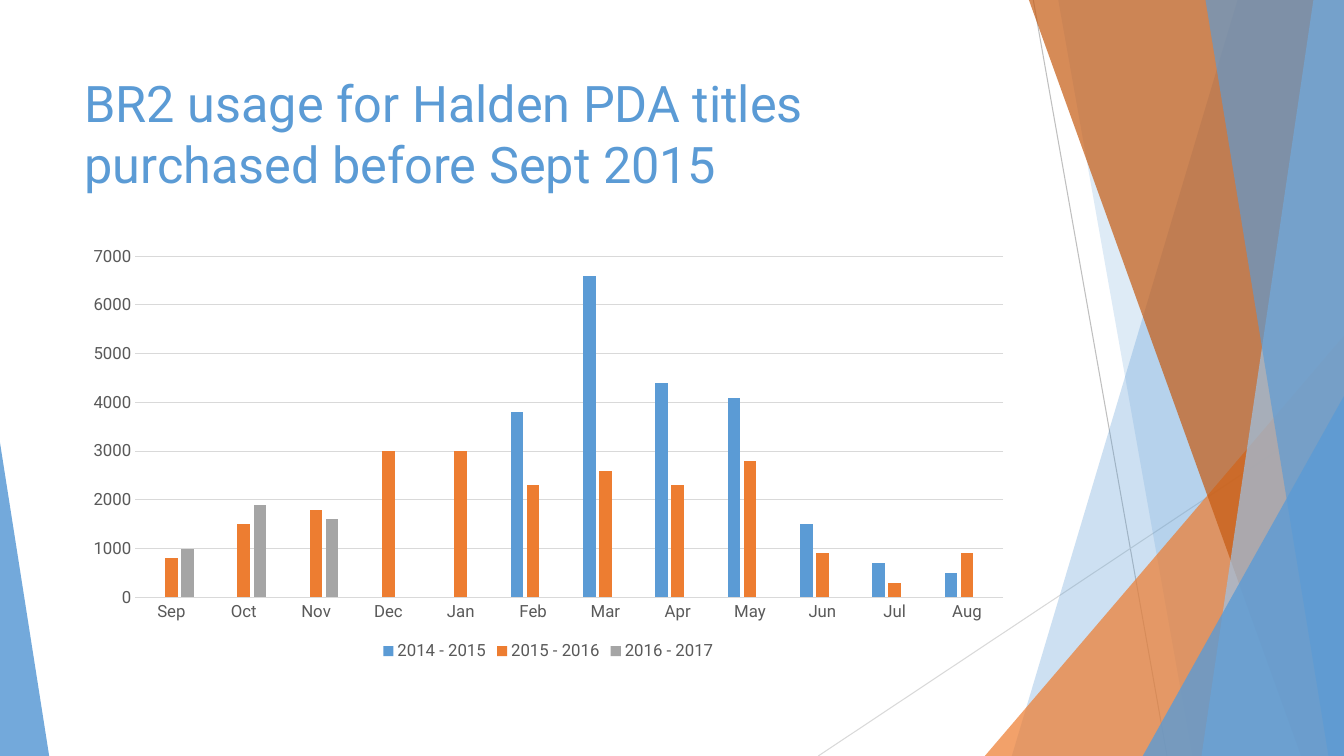
from lxml import etree
from pptx import Presentation
from pptx import util as u
from pptx.chart.data import CategoryChartData
from pptx.dml.color import RGBColor
from pptx.enum import chart as charts, shapes, text
from pptx.oxml.ns import qn

WIDTH, HEIGHT = 33.87, 19.05
COLOURS = {
    "blue": "5B9BD5", "light blue": "9DC3E6", "orange": "ED7D31",
    "rust": "C55A11", "grey": "A5A5A5", "label": "595959",
    "rule": "D9D9D9", "dark rule": "BFBFBF",
}
MONTHS = ["Sep", "Oct", "Nov", "Dec", "Jan", "Feb",
          "Mar", "Apr", "May", "Jun", "Jul", "Aug"]
USAGE = [
    ("2014 - 2015", "blue", [None] * 5 + [3800, 6600, 4400, 4100, 1500, 700, 500]),
    ("2015 - 2016", "orange", [800, 1500, 1800, 3000, 3000, 2300,
                               2600, 2300, 2800, 900, 300, 900]),
    ("2016 - 2017", "grey", [1000, 1900, 1600] + [None] * 9),
]


class Slide:
    def __init__(self, page, font="Roboto"):
        self.page = page
        self.font = font

    def colour(self, name):
        return RGBColor.from_string(COLOURS[name])

    def style_font(self, font, size, colour):
        font.name = self.font
        font.size = u.Pt(size)
        font.color.rgb = self.colour(colour)

    def style_line(self, line, colour):
        line.color.rgb = self.colour(colour)
        line.width = u.Pt(0.75)

    def paint(self, shape, colour, opacity):
        """Fill a shape with a see-through colour; opacity is in percent."""
        shape.shadow.inherit = False
        shape.line.fill.background()
        shape.fill.solid()
        shape.fill.fore_color.rgb = self.colour(colour)
        tint = shape.fill._xPr.find(".//" + qn("a:srgbClr"))
        etree.SubElement(tint, qn("a:alpha"), val=str(opacity * 1000))

    def line(self, start, end, colour):
        points = [u.Cm(value) for value in (*start, *end)]
        line = self.page.shapes.add_connector(shapes.MSO_CONNECTOR.STRAIGHT, *points)
        self.style_line(line.line, colour)
        etree.SubElement(line._element.spPr, qn("a:effectLst"))

    def band(self, top_x, bottom_x, colour, opacity):
        """Full-height shape from a slanted left edge to the slide's right edge."""
        builder = self.page.shapes.build_freeform(u.Cm(top_x), 0)
        builder.add_line_segments([
            (u.Cm(WIDTH), 0), (u.Cm(WIDTH), u.Cm(HEIGHT)),
            (u.Cm(bottom_x), u.Cm(HEIGHT))])
        self.paint(builder.convert_to_shape(), colour, opacity)

    def corner(self, left, top, width, apex, colour, opacity):
        """Triangle standing on the slide's bottom edge; apex 0 is left, 1 right."""
        triangle = self.page.shapes.add_shape(
            shapes.MSO_SHAPE.ISOSCELES_TRIANGLE,
            u.Cm(left), u.Cm(top), u.Cm(width), u.Cm(HEIGHT - top))
        triangle.adjustments[0] = apex
        self.paint(triangle, colour, opacity)

    def title(self, wording, left, top, width, height):
        box = self.page.shapes.add_textbox(
            u.Cm(left), u.Cm(top), u.Cm(width), u.Cm(height))
        box.text_frame.word_wrap = True
        box.text_frame.vertical_anchor = text.MSO_ANCHOR.TOP
        span = box.text_frame.paragraphs[0].add_run()
        span.text = wording
        self.style_font(span.font, 36, "blue")

    def column_chart(self, categories, series, left, top, width, height):
        data = CategoryChartData()
        data.categories = categories
        for name, _, values in series:
            data.add_series(name, values)
        chart = self.page.shapes.add_chart(
            charts.XL_CHART_TYPE.COLUMN_CLUSTERED,
            u.Cm(left), u.Cm(top), u.Cm(width), u.Cm(height), data).chart
        chart.has_title = False
        self.style_font(chart.font, 12, "label")

        plot = chart.plots[0]
        plot.vary_by_categories = False
        plot.gap_width = 219
        plot.overlap = -27
        for columns, (_, colour, _) in zip(plot.series, series):
            columns.format.fill.solid()
            columns.format.fill.fore_color.rgb = self.colour(colour)

        for axis in (chart.category_axis, chart.value_axis):
            axis.major_tick_mark = axis.minor_tick_mark = charts.XL_TICK_MARK.NONE
            self.style_font(axis.tick_labels.font, 12, "label")
        self.style_line(chart.category_axis.format.line, "rule")
        values_axis = chart.value_axis
        values_axis.minimum_scale, values_axis.maximum_scale = 0, 7000
        values_axis.major_unit = 1000
        values_axis.format.line.fill.background()
        self.style_line(values_axis.major_gridlines.format.line, "rule")

        chart.has_legend = True
        chart.legend.position = charts.XL_LEGEND_POSITION.BOTTOM
        chart.legend.include_in_layout = False
        self.style_font(chart.legend.font, 12, "label")


def main():
    deck = Presentation()
    deck.slide_width, deck.slide_height = u.Cm(WIDTH), u.Cm(HEIGHT)
    slide = Slide(deck.slides.add_slide(deck.slide_layouts[6]))

    slide.line((26.04, 0), (29.41, HEIGHT), "dark rule")
    slide.line((WIDTH, 10.24), (20.62, HEIGHT), "rule")
    slide.band(31.19, 25.5, "blue", 30)
    slide.band(26.67, 30.05, "blue", 20)
    slide.corner(24.82, 8.46, WIDTH - 24.82, 1, "orange", 72)
    slide.band(25.93, 32.79, "rust", 70)
    slide.band(33.1, 30.28, "light blue", 70)
    slide.band(30.38, 33.48, "blue", 65)
    slide.corner(28.8, 9.98, WIDTH - 28.8, 1, "blue", 80)
    slide.corner(0, 11.15, 1.24, 0, "blue", 85)

    slide.title("BR2 usage for Halden PDA titles purchased before Sept 2015",
                1.88, 1.7, 23.88, 3.66)
    slide.column_chart(MONTHS, USAGE, 1.88, 5.99, 23.88, 10.77)
    deck.save("out.pptx")


if __name__ == "__main__":
    main()
